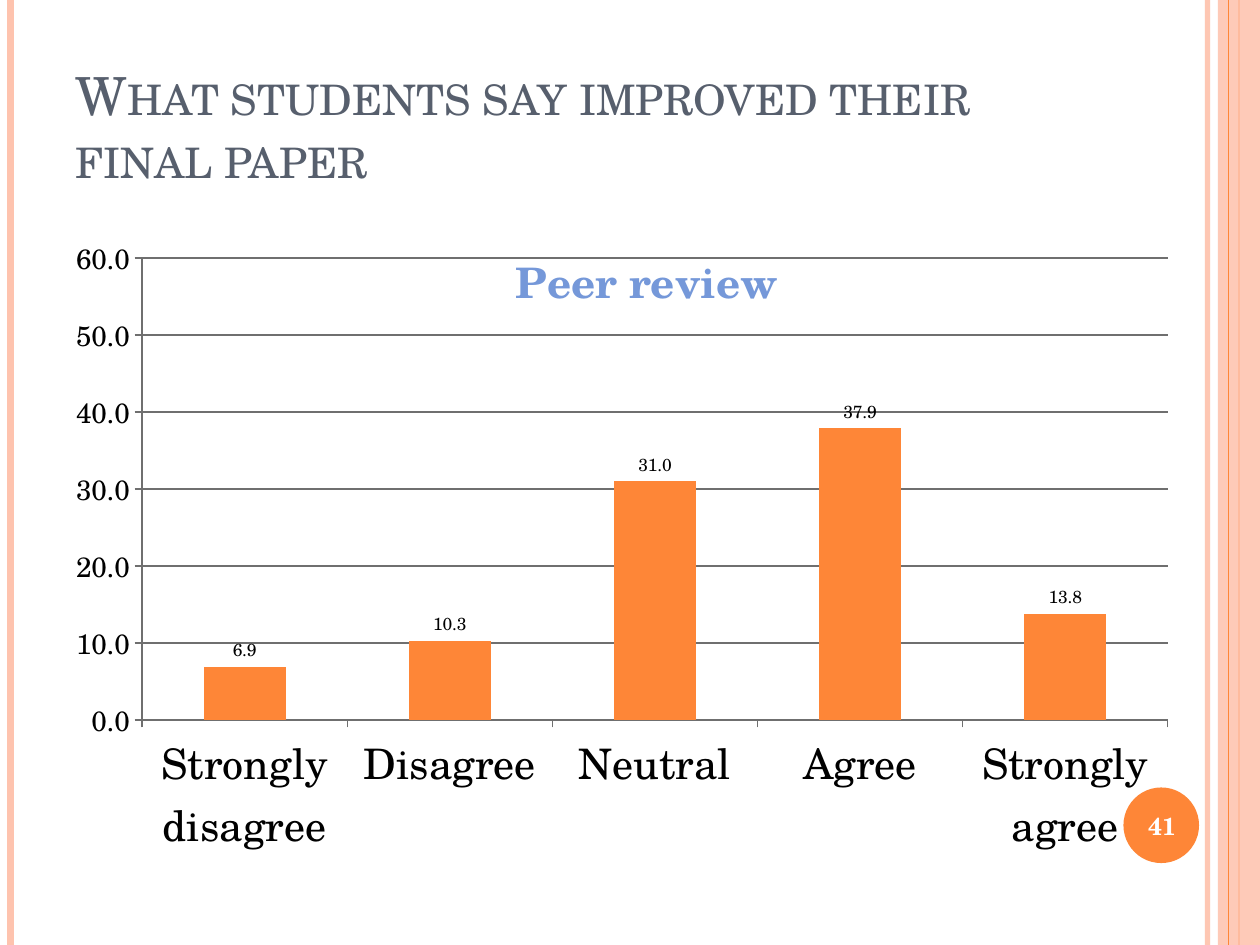
from dataclasses import dataclass

from lxml import etree
from pptx import Presentation
from pptx.chart.data import CategoryChartData
from pptx.dml.color import RGBColor
from pptx.enum.chart import XL_CHART_TYPE, XL_LABEL_POSITION, XL_TICK_MARK
from pptx.enum.shapes import MSO_CONNECTOR, MSO_SHAPE
from pptx.enum.text import MSO_ANCHOR, PP_ALIGN
from pptx.oxml.ns import qn
from pptx.util import Pt

COLUMNS = XL_CHART_TYPE.COLUMN_CLUSTERED
LABEL_ABOVE = XL_LABEL_POSITION.OUTSIDE_END
TICK_OUT, TICK_NONE = XL_TICK_MARK.OUTSIDE, XL_TICK_MARK.NONE
STRAIGHT = MSO_CONNECTOR.STRAIGHT
RECTANGLE, OVAL = MSO_SHAPE.RECTANGLE, MSO_SHAPE.OVAL
BOTTOM, MIDDLE = MSO_ANCHOR.BOTTOM, MSO_ANCHOR.MIDDLE
LEFT, CENTER = PP_ALIGN.LEFT, PP_ALIGN.CENTER


@dataclass(frozen=True)
class Theme:
    font: str = "TeX Gyre Schola"
    orange: str = "FE8637"
    peach: str = "FEC3AE"
    slate: str = "575F6D"
    blue: str = "7598D9"
    black: str = "000000"
    white: str = "FFFFFF"
    grid: str = "6F6F6F"
    title_size: int = 30
    heading_size: int = 24
    scale_size: int = 16
    number_size: int = 14
    label_size: int = 10


THEME = Theme()
WIDTH, HEIGHT = 720, 540


def style_font(font, size, color, bold=False):
    font.name = THEME.font
    font.size = Pt(size)
    font.bold = bold
    font.color.rgb = RGBColor.from_string(color)


def write(frame, text, *, size, color, bold=False, align=LEFT,
          anchor=MIDDLE, small_caps=False):
    frame.word_wrap = True
    frame.vertical_anchor = anchor
    paragraph = frame.paragraphs[0]
    paragraph.alignment = align
    run = paragraph.add_run()
    run.text = text
    style_font(run.font, size, color, bold)
    if small_caps:
        run.font._element.set("cap", "small")


def set_alpha(fill_parent, percent):
    color = fill_parent.find(".//" + qn("a:srgbClr"))
    etree.SubElement(color, qn("a:alpha")).set("val", str(percent * 1000))


def add_solid(slide, kind, box, color):
    solid = slide.shapes.add_shape(kind, *map(Pt, box))
    solid.shadow.inherit = False
    solid.fill.solid()
    solid.fill.fore_color.rgb = RGBColor.from_string(color)
    solid.line.fill.background()
    return solid


def add_stripe(slide, x, top, height, color, weight, opacity=100):
    stripe = slide.shapes.add_connector(
        STRAIGHT, Pt(x), Pt(top), Pt(x), Pt(top + height))
    stripe.line.color.rgb = RGBColor.from_string(color)
    stripe.line.width = Pt(weight)
    properties = stripe._element.spPr
    if opacity < 100:
        set_alpha(properties, opacity)
    etree.SubElement(properties, qn("a:effectLst"))


def add_frame(slide, box):
    """Vertical stripes and band along the slide's sides."""
    left, top, width, height = box
    right = left + width
    add_stripe(slide, right - 30, top, height, THEME.peach, 3, 93)
    add_stripe(slide, left + 6, top, height, THEME.peach, 4.5)
    add_stripe(slide, right - 12, top, height, THEME.orange, 1.5)
    band = add_solid(slide, RECTANGLE, (right - 24, top, 24, height), THEME.peach)
    set_alpha(band._element.spPr, 87)
    add_stripe(slide, right - 18, top, height, THEME.orange, 0.75)


def add_title(slide, box, text):
    title = slide.shapes.title
    title.left, title.top, title.width, title.height = map(Pt, box)
    write(title.text_frame, text, size=THEME.title_size, color=THEME.slate,
          anchor=BOTTOM, small_caps=True)


def set_layout(parent, index, **settings):
    """Fix the place of a chart part as fractions of the chart."""
    for old in parent.findall(qn("c:layout")):
        parent.remove(old)
    layout = etree.Element(qn("c:layout"))
    manual = etree.SubElement(layout, qn("c:manualLayout"))
    for key, value in settings.items():
        etree.SubElement(manual, qn("c:" + key)).set("val", str(value))
    parent.insert(index, layout)


def style_line(line):
    line.color.rgb = RGBColor.from_string(THEME.grid)
    line.width = Pt(0.75)


def style_axis(axis, size):
    axis.major_tick_mark = TICK_OUT
    axis.minor_tick_mark = TICK_NONE
    style_font(axis.tick_labels.font, size, THEME.black)
    style_line(axis.format.line)


def add_ratings_chart(slide, box, heading, ratings):
    data = CategoryChartData(number_format="0.0")
    data.categories = list(ratings)
    data.add_series(heading, list(ratings.values()))
    chart = slide.shapes.add_chart(COLUMNS, *map(Pt, box), data).chart
    chart.has_legend = False
    style_font(chart.font, THEME.label_size, THEME.black)

    # Heading, lying over the top of the plot
    write(chart.chart_title.text_frame, heading, size=THEME.heading_size,
          color=THEME.blue, bold=True, align=CENTER)
    set_layout(chart.chart_title._element, 1, xMode="edge", yMode="edge",
               x=0.39, y=0.06)
    set_layout(chart._chartSpace.chart.plotArea, 0, layoutTarget="inner",
               xMode="edge", yMode="edge", x=0.06, y=0.093, w=0.926, h=0.684)

    # Axes
    style_axis(chart.category_axis, THEME.heading_size)
    scale = chart.value_axis
    style_axis(scale, THEME.scale_size)
    scale.minimum_scale, scale.maximum_scale, scale.major_unit = 0, 60, 10
    scale.tick_labels.number_format = "0.0"
    scale.tick_labels.number_format_is_linked = False
    style_line(scale.major_gridlines.format.line)

    # Columns and their values
    plot = chart.plots[0]
    plot.gap_width = 150
    plot.vary_by_categories = False
    columns = plot.series[0].format.fill
    columns.solid()
    columns.fore_color.rgb = RGBColor.from_string(THEME.orange)
    plot.has_data_labels = True
    labels = plot.data_labels
    labels.show_value = True
    labels.position = LABEL_ABOVE
    labels.number_format = "0.0"
    labels.number_format_is_linked = False
    style_font(labels.font, THEME.label_size, THEME.black)


def add_page_number(slide, box, number):
    left, top, width, height = box
    caption = slide.shapes.add_textbox(
        Pt(left - 2), Pt(top + 1), Pt(width + 5), Pt(height - 2))
    write(caption.text_frame, number, size=THEME.number_size,
          color=THEME.white, bold=True, align=CENTER)


def main():
    deck = Presentation()
    deck.slide_width, deck.slide_height = Pt(WIDTH), Pt(HEIGHT)
    slide = deck.slides.add_slide(deck.slide_layouts[5])
    badge = (642, 450, 43.2, 43.2)

    add_frame(slide, (0, 0, WIDTH, HEIGHT))
    add_solid(slide, OVAL, badge, THEME.orange)
    add_title(slide, (36, 21.6, 588, 90),
              "What students say improved their final paper")
    add_ratings_chart(slide, (43.2, 111.6, 633, 386), "Peer review", {
        "Strongly disagree": 6.9,
        "Disagree": 10.3,
        "Neutral": 31.0,
        "Agree": 37.9,
        "Strongly agree": 13.8,
    })
    add_page_number(slide, badge, "41")
    deck.save("out.pptx")


if __name__ == "__main__":
    main()
